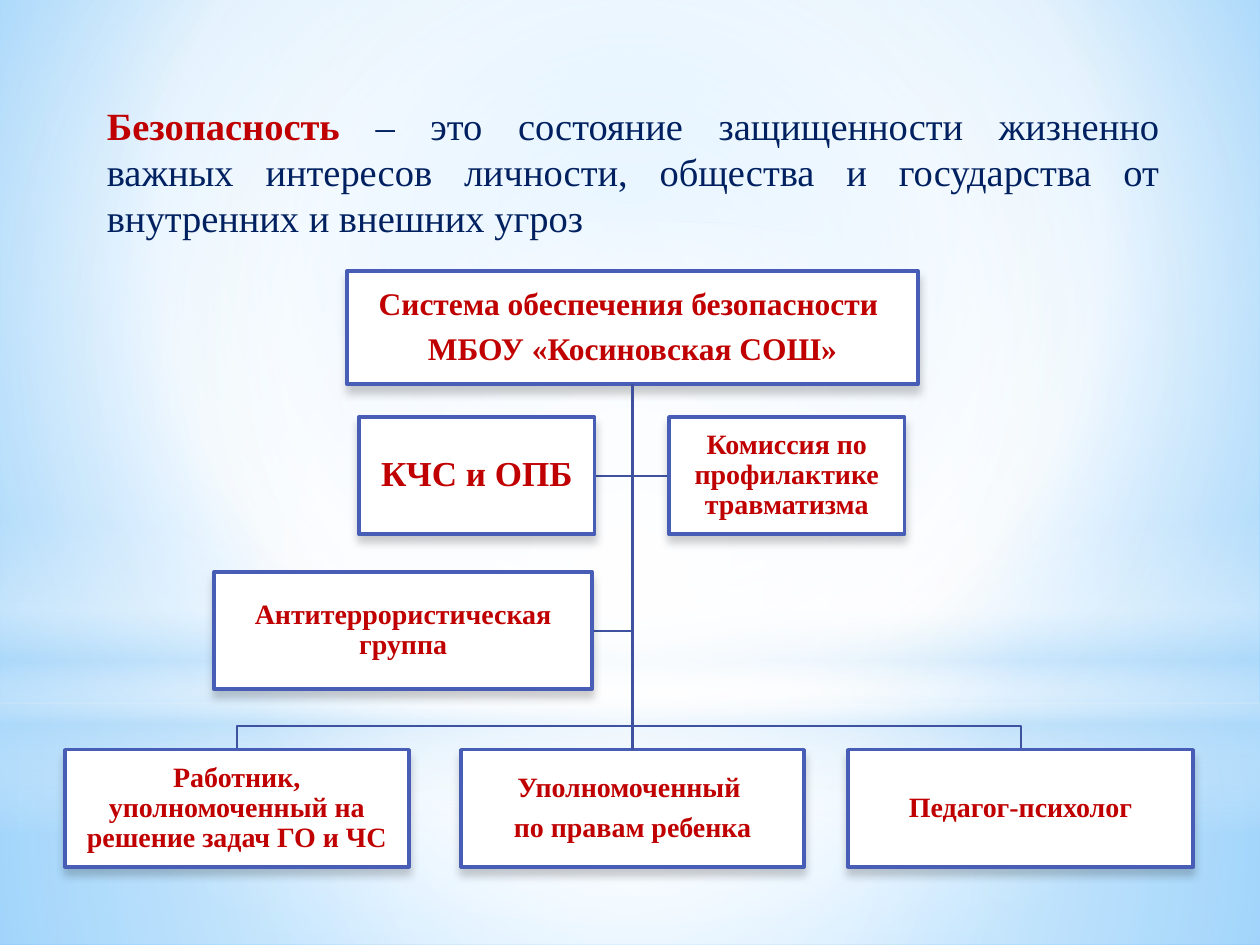
from lxml import etree
from pptx import Presentation
from pptx.dml.color import RGBColor
from pptx.enum.shapes import MSO_CONNECTOR, MSO_SHAPE
from pptx.enum.text import MSO_ANCHOR, PP_ALIGN
from pptx.oxml import parse_xml
from pptx.oxml.ns import nsdecls, qn
from pptx.util import Inches, Pt

FONT = "Times New Roman"
RED = RGBColor(0xC0, 0x00, 0x00)
NAVY = RGBColor(0x00, 0x20, 0x60)
WHITE = RGBColor(0xFF, 0xFF, 0xFF)
BORDER = RGBColor(0x47, 0x5D, 0xB6)
BRANCH = RGBColor(0x3E, 0x52, 0xA0)
SKY = RGBColor(0xB4, 0xDC, 0xFA)
LIGHT_BLUE = RGBColor(0x9E, 0xD5, 0xFF)
DEEP_BLUE = RGBColor(0x5B, 0xB9, 0xFF)

TRUNK_X = 5.02
ROOT_TOP, ROOT_HEIGHT = 2.15, 0.9
ROOT_BOTTOM = ROOT_TOP + ROOT_HEIGHT
BOX_HEIGHT = 0.93
STAFF_TOP = 5.95
STAFF_BUS_Y = 5.76

CENTRE = (50, 50, 50, 50)


def gradient_xml(stops, focus=None):
    """Stops are (position, colour, opacity) in percent; no focus means top to bottom."""
    stop_xml = "".join(
        f'<a:gs pos="{position * 1000}"><a:srgbClr val="{colour}">'
        f'<a:alpha val="{opacity * 1000}"/></a:srgbClr></a:gs>'
        for position, colour, opacity in stops)
    if focus is None:
        direction = '<a:lin ang="5400000" scaled="0"/>'
    else:
        left, top, right, bottom = (side * 1000 for side in focus)
        direction = (f'<a:path path="circle"><a:fillToRect l="{left}" t="{top}" '
                     f'r="{right}" b="{bottom}"/></a:path>')
    return (f'<a:gradFill {nsdecls("a")} rotWithShape="1"><a:gsLst>{stop_xml}</a:gsLst>'
            f'{direction}</a:gradFill>')


def set_background(slide):
    gradient = gradient_xml(
        [(0, LIGHT_BLUE, 100), (60, WHITE, 100), (100, DEEP_BLUE, 100)], (20, 10, 20, 60))
    background = parse_xml(
        f'<p:bg {nsdecls("p", "a")}><p:bgPr>{gradient}<a:effectLst/></p:bgPr></p:bg>')
    slide.shapes._spTree.addprevious(background)


def add_glow(slide, preset, top, height, stops, focus=None):
    """Full-width translucent layer of the backdrop."""
    glow = slide.shapes.add_shape(preset, 0, Inches(top), Inches(10), Inches(height))
    glow.shadow.inherit = False
    glow.line.fill.background()
    geometry = glow._element.spPr.find(qn("a:prstGeom"))
    geometry.addnext(parse_xml(gradient_xml(stops, focus)))


def add_definition(slide):
    box = slide.shapes.add_textbox(Inches(0.75), Inches(0.76), Inches(8.55), Inches(1.21))
    box.text_frame.word_wrap = True
    paragraph = box.text_frame.paragraphs[0]
    paragraph.alignment = PP_ALIGN.JUSTIFY
    paragraph.font.size = Pt(22)
    paragraph.font.name = FONT
    term = paragraph.add_run()
    term.text = "Безопасность "
    term.font.bold = True
    term.font.color.rgb = RED
    meaning = paragraph.add_run()
    meaning.text = ("– это состояние защищенности жизненно важных интересов личности, "
                    "общества и государства от внутренних и внешних угроз")
    meaning.font.color.rgb = NAVY


def add_drop_shadow(shape):
    shape.shadow.inherit = False
    effects = shape._element.spPr.find(qn("a:effectLst"))
    shadow = etree.SubElement(effects, qn("a:outerShdw"), blurRad=str(Pt(5)),
                              dist=str(Pt(4)), dir="5400000", rotWithShape="0")
    colour = etree.SubElement(shadow, qn("a:srgbClr"), val="000000")
    etree.SubElement(colour, qn("a:alpha"), val="20000")


def add_unit(slide, left, top, width, height, lines, size):
    unit = slide.shapes.add_shape(
        MSO_SHAPE.RECTANGLE, Inches(left), Inches(top), Inches(width), Inches(height))
    unit.fill.solid()
    unit.fill.fore_color.rgb = WHITE
    unit.line.color.rgb = BORDER
    unit.line.width = Pt(2)
    add_drop_shadow(unit)
    frame = unit.text_frame
    frame.word_wrap = True
    frame.vertical_anchor = MSO_ANCHOR.MIDDLE
    frame.margin_left = frame.margin_right = Inches(0.01)
    frame.margin_top = frame.margin_bottom = Inches(0.01)
    frame.text = "\n".join(lines)
    for paragraph in frame.paragraphs:
        paragraph.alignment = PP_ALIGN.CENTER
        paragraph.line_spacing = 0.9
        paragraph.space_after = Pt(round(size * 0.35, 1))
        paragraph.font.size = Pt(size)
        paragraph.font.name = FONT
        paragraph.font.bold = True
        paragraph.font.color.rgb = RED
    return unit


def style_branch(line):
    line.color.rgb = BRANCH
    line.width = Pt(1.25)


def add_branch(slide, *corners):
    """Open line from the bottom of the root through the given corners."""
    builder = slide.shapes.build_freeform(Inches(TRUNK_X), Inches(ROOT_BOTTOM))
    builder.add_line_segments([(Inches(x), Inches(y)) for x, y in corners], close=False)
    branch = builder.convert_to_shape()
    branch.fill.background()
    branch.shadow.inherit = False
    style_branch(branch.line)


def add_straight_branch(slide, upper, lower):
    branch = slide.shapes.add_connector(MSO_CONNECTOR.STRAIGHT, 0, 0, 0, 0)
    branch.begin_connect(upper, 2)
    branch.end_connect(lower, 0)
    style_branch(branch.line)
    etree.SubElement(branch._element.spPr, qn("a:effectLst"))


def add_backdrop(slide):
    set_background(slide)
    add_glow(slide, MSO_SHAPE.RECTANGLE, 5.58, 1.92,
             [(0, WHITE, 91), (37, WHITE, 76), (100, SKY, 79)], CENTRE)
    add_glow(slide, MSO_SHAPE.RECTANGLE, 0, 5.58,
             [(0, WHITE, 89), (48, WHITE, 62), (100, SKY, 79)], CENTRE)
    add_glow(slide, MSO_SHAPE.RECTANGLE, 4.12, 2.5,
             [(0, WHITE, 0), (29, WHITE, 30), (45, SKY, 40),
              (55, WHITE, 26), (65, SKY, 60), (100, WHITE, 0)])
    add_glow(slide, MSO_SHAPE.OVAL, 1.75, 5.58, [(0, WHITE, 100), (56, WHITE, 0)], CENTRE)


def add_safety_system(slide):
    commissions = [
        (2.85, 3.31, 1.87, ["КЧС и ОПБ"], 20),
        (5.31, 3.31, 1.87, ["Комиссия по профилактике травматизма"], 16),
        (1.7, 4.54, 3, ["Антитеррористическая группа"], 16),
    ]
    staff = [
        (1.88, 2.73, ["Работник, уполномоченный на решение задач ГО и ЧС"]),
        (TRUNK_X, 2.72, ["Уполномоченный ", "по правам ребенка"]),
        (8.1, 2.74, ["Педагог-психолог"]),
    ]
    for left, top, width, _, _ in commissions:
        middle = top + BOX_HEIGHT / 2
        inner_edge = left if left > TRUNK_X else left + width
        add_branch(slide, (TRUNK_X, middle), (inner_edge, middle))
    for centre, _, _ in staff:
        if centre != TRUNK_X:
            add_branch(slide, (TRUNK_X, STAFF_BUS_Y), (centre, STAFF_BUS_Y),
                       (centre, STAFF_TOP))

    root_width = 4.53
    root = add_unit(slide, TRUNK_X - root_width / 2, ROOT_TOP, root_width, ROOT_HEIGHT,
                    ["Система обеспечения безопасности ", "МБОУ «Косиновская СОШ»"], 18)
    for left, top, width, lines, size in commissions:
        add_unit(slide, left, top, width, BOX_HEIGHT, lines, size)
    for centre, width, lines in staff:
        unit = add_unit(slide, centre - width / 2, STAFF_TOP, width, BOX_HEIGHT, lines, 16)
        if centre == TRUNK_X:
            add_straight_branch(slide, root, unit)


def main():
    presentation = Presentation()
    presentation.slide_width = Inches(10)
    presentation.slide_height = Inches(7.5)
    slide = presentation.slides.add_slide(presentation.slide_layouts[6])
    add_backdrop(slide)
    add_definition(slide)
    add_safety_system(slide)
    presentation.save("out.pptx")


if __name__ == "__main__":
    main()
